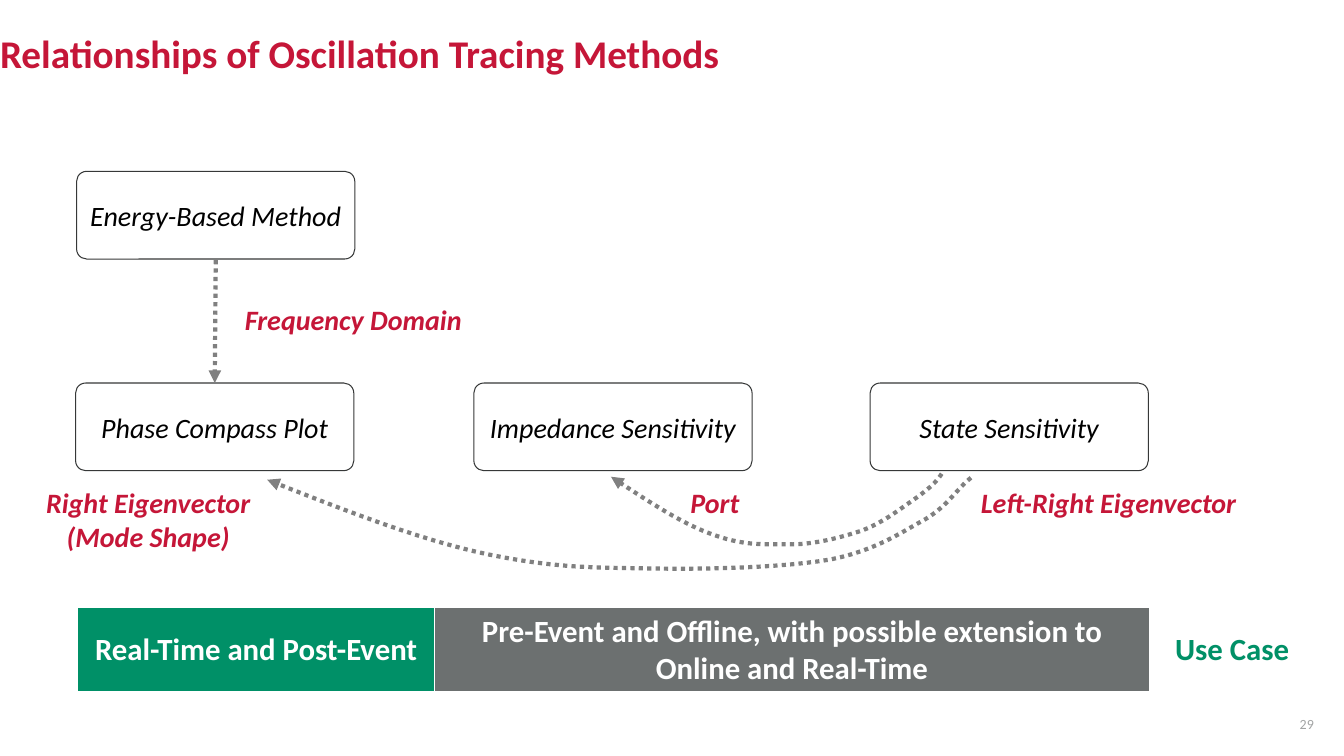
from lxml.etree import SubElement
from pptx import Presentation
from pptx.dml.color import RGBColor
from pptx.enum.dml import MSO_LINE
from pptx.enum.shapes import MSO_CONNECTOR, MSO_SHAPE
from pptx.enum.text import MSO_ANCHOR as ANCHOR, MSO_AUTO_SIZE as AUTO, PP_ALIGN as ALIGN
from pptx.oxml.ns import qn
from pptx.util import Pt

PX = 9144
COLORS = {"red": "C51638", "green": "009067", "gray": "6C7070", "arrow": "808080",
          "outline": "363838", "number": "A2A4A4", "black": "000000", "white": "FFFFFF"}
rgb = {name: RGBColor.from_string(value) for name, value in COLORS.items()}


def write(tf, text, size, color, align=ALIGN.LEFT, anchor=ANCHOR.TOP, **style):
    tf.word_wrap = True
    tf.vertical_anchor = anchor
    p = tf.paragraphs[0]
    p.alignment = align
    r = p.add_run()
    r.text = text
    r.font.color.rgb = rgb[color]
    for key, value in {"name": "Calibri", "size": Pt(size), **style}.items():
        setattr(r.font, key, value)


def make_arrow(shape):
    shape.line.color.rgb = rgb["arrow"]
    shape.line.width = Pt(3)
    shape.line.dash_style = MSO_LINE.ROUND_DOT
    spPr = shape._element.spPr
    SubElement(spPr.find(qn("a:ln")), qn("a:tailEnd"), type="triangle")
    if spPr.find(qn("a:effectLst")) is None:
        SubElement(spPr, qn("a:effectLst"))


prs = Presentation()
prs.slide_width, prs.slide_height = 1333 * PX, 750 * PX
s = prs.slides.add_slide(prs.slide_layouts[5])

title = s.shapes.title
title.left, title.top, title.width, title.height = 0, 29 * PX, 1333 * PX, 47 * PX
tf = title.text_frame
for side in ("left", "top", "right", "bottom"):
    setattr(tf, f"margin_{side}", 0)
write(tf, "Relationships of Oscillation Tracing Methods", 28, "red",
      anchor=ANCHOR.MIDDLE, bold=True)

table = s.shapes.add_table(1, 2, 77 * PX, 603 * PX, 1063 * PX, 84 * PX).table
table.rows[0].height = 84 * PX
use_cases = [
    ("Real-Time and Post-Event", 354, "green"),
    ("Pre-Event and Offline, with possible extension to Online and Real-Time", 709, "gray"),
]
for i, (text, width, fill) in enumerate(use_cases):
    table.columns[i].width = width * PX
    cell = table.cell(0, i)
    write(cell.text_frame, text, 22, "white", ALIGN.CENTER, bold=True)
    cell.vertical_anchor = ANCHOR.MIDDLE
    tcPr = cell._tc.get_or_add_tcPr()
    for edge, weight in (("lnL", 1), ("lnR", 1), ("lnT", 1), ("lnB", 3)):
        ln = SubElement(tcPr, qn(f"a:{edge}"), w=str(Pt(weight)))
        SubElement(SubElement(ln, qn("a:solidFill")), qn("a:srgbClr"), val=COLORS["white"])
    cell.fill.solid()
    cell.fill.fore_color.rgb = rgb[fill]

methods = [
    ("Energy-Based Method", 76, 170),
    ("Phase Compass Plot", 75, 380),
    ("Impedance Sensitivity", 470, 380),
    ("State Sensitivity", 863, 380),
]
for text, x, y in methods:
    sp = s.shapes.add_shape(MSO_SHAPE.ROUNDED_RECTANGLE, x * PX, y * PX, 276 * PX, 87 * PX)
    sp.adjustments[0] = 0.115
    sp.shadow.inherit = False
    sp.fill.background()
    sp.line.color.rgb = rgb["outline"]
    sp.line.width = Pt(0.75)
    sp.text_frame.margin_left = sp.text_frame.margin_right = 5 * PX
    write(sp.text_frame, text, 20, "black", ALIGN.CENTER, ANCHOR.MIDDLE, italic=True)

make_arrow(s.shapes.add_connector(MSO_CONNECTOR.STRAIGHT, 214 * PX, 258 * PX, 213 * PX, 380 * PX))

curves = [
    [(934, 470), (928, 480), (916, 489), (903, 498), (890, 507), (876, 518), (856, 526),
     (835, 533), (806, 541), (780, 540), (753, 540), (736, 541), (706, 530),
     (675, 519), (641, 496), (606, 473)],
    [(963, 474), (948, 486), (941, 501), (918, 515), (894, 528), (869, 546), (824, 555),
     (778, 563), (703, 565), (647, 564), (590, 563), (552, 564), (484, 550),
     (417, 536), (341, 506), (265, 476)],
]
STEPS = 12
for knots in curves:
    points = []
    for i in range(0, len(knots) - 1, 3):
        for step in range(1, STEPS + 1):
            t = step / STEPS
            weights = ((1 - t) ** 3, 3 * t * (1 - t) ** 2, 3 * t ** 2 * (1 - t), t ** 3)
            points.append([sum(w * k[axis] for w, k in zip(weights, knots[i:i + 4])) * PX
                           for axis in (0, 1)])
    builder = s.shapes.build_freeform(knots[0][0] * PX, knots[0][1] * PX)
    builder.add_line_segments(points, close=False)
    sp = builder.convert_to_shape()
    sp.shadow.inherit = False
    sp.fill.background()
    make_arrow(sp)

note = {"size": 20, "color": "red", "bold": True, "italic": True}
centered = {"align": ALIGN.CENTER}
labels = [
    ("Port", 675, 477, 203, 44, note),
    ("Right Eigenvector (Mode Shape)", 29, 477, 236, 77, note | centered),
    ("Left-Right Eigenvector", 963, 477, 286, 44, note),
    ("Frequency Domain", 233, 295, 236, 44, note),
    ("Use Case", 1147, 620, 150, 47, {"size": 22, "color": "green", "bold": True} | centered),
    ("29", 1013, 698, 300, 40,
     {"size": 10, "color": "number", "align": ALIGN.RIGHT, "anchor": ANCHOR.MIDDLE}),
]
for text, x, y, w, h, style in labels:
    tf = s.shapes.add_textbox(x * PX, y * PX, w * PX, h * PX).text_frame
    tf.auto_size = AUTO.NONE
    write(tf, text, **style)

prs.save("out.pptx")
